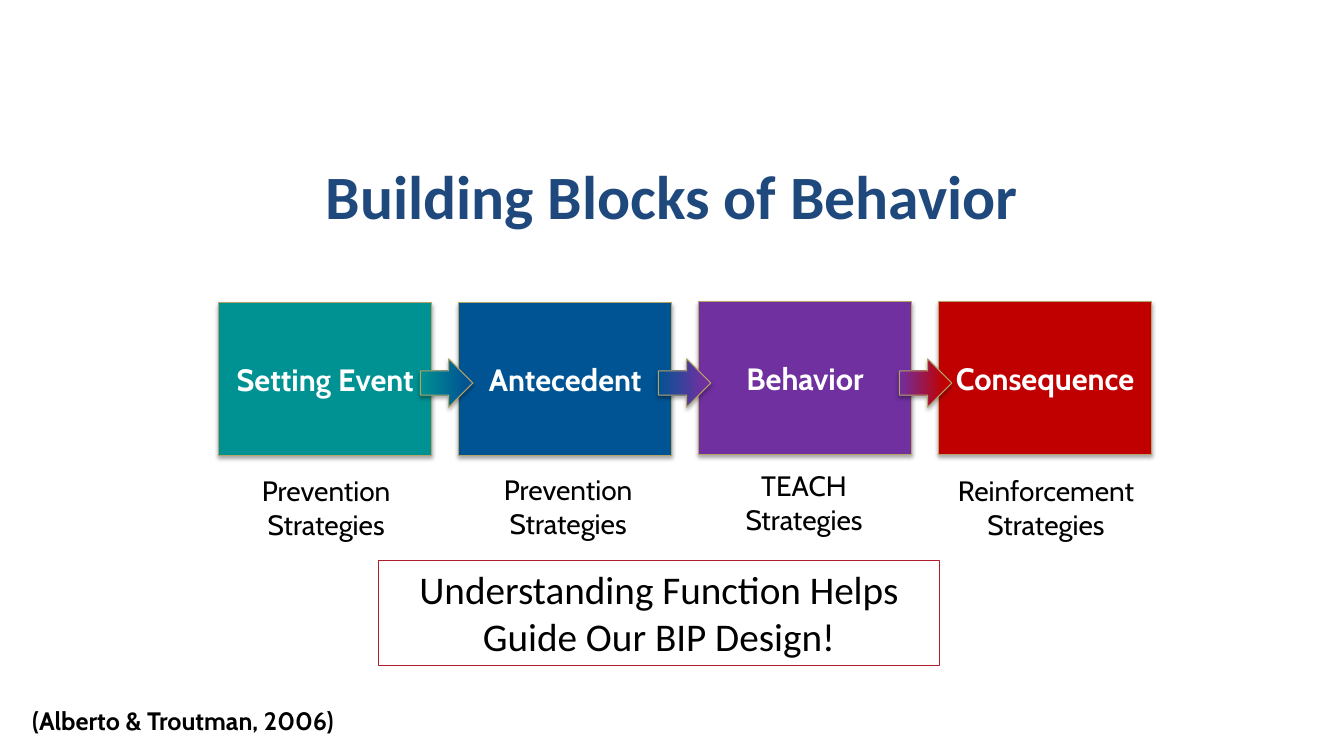
"""Build the "Building Blocks of Behavior" slide."""
from lxml import etree
from pptx import Presentation
from pptx.dml.color import RGBColor
from pptx.enum import shapes, text
from pptx.oxml import ns
from pptx.util import Inches, Pt

NAVY = RGBColor(0x1F, 0x49, 0x7D)
TEAL = RGBColor(0x00, 0x91, 0x93)
BLUE = RGBColor(0x00, 0x54, 0x93)
PURPLE = RGBColor(0x70, 0x30, 0xA0)
RED = RGBColor(0xC0, 0x00, 0x00)
GOLD = RGBColor(0xB5, 0xA3, 0x69)
CRIMSON = RGBColor(0xAF, 0x1E, 0x2D)
WHITE = RGBColor(0xFF, 0xFF, 0xFF)
BLACK = RGBColor(0x00, 0x00, 0x00)
CENTER, LEFT = text.PP_ALIGN.CENTER, text.PP_ALIGN.LEFT
MIDDLE, TOP = text.MSO_ANCHOR.MIDDLE, text.MSO_ANCHOR.TOP


def write(sp, words, font, align=CENTER, anchor=TOP):
    tf = sp.text_frame
    tf.word_wrap = True
    tf.vertical_anchor = anchor
    p = tf.paragraphs[0]
    p.alignment = align
    r = p.add_run()
    r.text = words
    for name, value in font.items():
        if name == "color":
            r.font.color.rgb = value
        else:
            setattr(r.font, name, value)


def add_outlined(kind, box, line, shadow=True):
    sp = s.shapes.add_shape(kind, *map(Inches, box))
    sp.line.color.rgb = line
    sp.line.width = Pt(0.75)
    sp.shadow.inherit = False
    if shadow:
        effects = sp._element.spPr.find(ns.qn("a:effectLst"))
        outer = etree.SubElement(effects, ns.qn("a:outerShdw"), blurRad=str(Pt(3.1)),
                                 dist=str(Pt(1.8)), dir="5400000", rotWithShape="0")
        color = etree.SubElement(outer, ns.qn("a:srgbClr"), val="000000")
        etree.SubElement(color, ns.qn("a:alpha"), val="35000")
    return sp


prs = Presentation()
prs.slide_width, prs.slide_height = Inches(13.33), Inches(7.5)
s = prs.slides.add_slide(prs.slide_layouts[6])

title_font = {"name": "Calibri", "size": Pt(44), "bold": True, "color": NAVY}
block_font = {"name": "Cabin", "size": Pt(22), "bold": True, "color": WHITE}
strategy_font = {"name": "Cabin", "size": Pt(20), "color": BLACK}
citation_font = {"name": "Cabin", "size": Pt(18), "bold": True, "color": BLACK}
summary_font = {"name": "Calibri", "size": Pt(28), "color": BLACK}

blocks = [
    ("Setting Event", TEAL, 3, "Prevention Strategies", 2.17, 4.65),
    ("Antecedent", BLUE, 3, "Prevention Strategies", 4.57, 4.64),
    ("Behavior", PURPLE, 2.99, "TEACH Strategies", 6.91, 4.6),
    ("Consequence", RED, 2.99, "Reinforcement Strategies", 9.31, 4.65),
]
for i, (name, color, top, _, _, _) in enumerate(blocks):
    sp = add_outlined(shapes.MSO_SHAPE.RECTANGLE, (2.17 + 2.38 * i, top, 2.11, 1.52), GOLD)
    sp.fill.solid()
    sp.fill.fore_color.rgb = color
    write(sp, name, block_font, anchor=MIDDLE)

for left, start, end in zip((4.17, 6.53, 8.92), blocks, blocks[1:]):
    sp = add_outlined(shapes.MSO_SHAPE.RIGHT_ARROW, (left, 3.56, 0.52, 0.48), GOLD)
    sp.fill.gradient()
    sp.fill.gradient_angle = 0
    for stop, position, color in zip(sp.fill.gradient_stops, (0, 0.86), (start[1], end[1])):
        stop.position = position
        stop.color.rgb = color

labels = [((left, top, 2.13, 0.77), strategy, strategy_font, CENTER, TOP)
          for _, _, _, strategy, left, top in blocks]
labels += [
    ((0.67, 1.24, 12, 1.38), "Building Blocks of Behavior", title_font, CENTER, MIDDLE),
    ((0.22, 6.95, 8.67, 0.4), "(Alberto & Troutman, 2006)", citation_font, LEFT, TOP),
]
for box, words, font, align, anchor in labels:
    write(s.shapes.add_textbox(*map(Inches, box)), words, font, align, anchor)

summary = add_outlined(shapes.MSO_SHAPE.RECTANGLE, (3.75, 5.56, 5.57, 1.04), CRIMSON, shadow=False)
summary.fill.background()
write(summary, "Understanding Function Helps Guide Our BIP Design!", summary_font)

prs.save("out.pptx")
